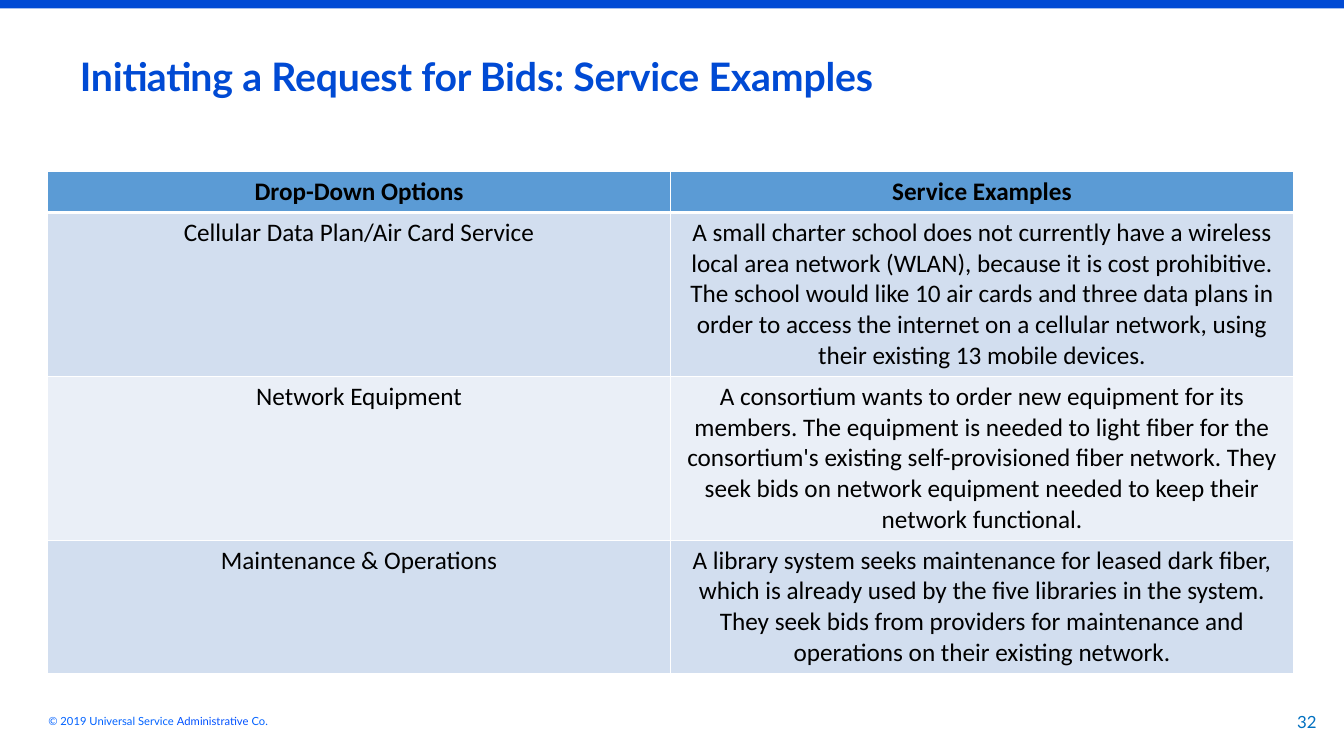
from lxml import etree
from pptx import Presentation
from pptx.dml.color import RGBColor
from pptx.enum import shapes, text
from pptx.oxml import ns
from pptx.util import Pt

BLUE = RGBColor(0x00, 0x4A, 0xD4)
PAGE = RGBColor(0x00, 0x70, 0xC0)
NOTE = RGBColor(0x00, 0x62, 0xFF)
DEEP = RGBColor(0x00, 0x51, 0xFF)
HEAD = RGBColor(0x5B, 0x9B, 0xD5)
BANDS = [RGBColor(0xD2, 0xDE, 0xEF), RGBColor(0xEA, 0xEF, 0xF7)]
BLACK = RGBColor(0, 0, 0)

ROWS = [
    ("Drop-Down Options", "Service Examples"),
    ("Cellular Data Plan/Air Card Service",
     "A small charter school does not currently have a wireless local area "
     "network (WLAN), because it is cost prohibitive. The school would like "
     "10 air cards and three data plans in order to access the internet on a "
     "cellular network, using their existing 13 mobile devices."),
    ("Network Equipment",
     "A consortium wants to order new equipment for its members. The "
     "equipment is needed to light fiber for the consortium's existing "
     "self-provisioned fiber network. They seek bids on network equipment "
     "needed to keep their network functional."),
    ("Maintenance & Operations",
     "A library system seeks maintenance for leased dark fiber, which is "
     "already used by the five libraries in the system. They seek bids from "
     "providers for maintenance and operations on their existing network."),
]
HEIGHTS = [29.2, 115, 115, 93.5]


def write(frame, *runs, size, font="Lato", bold=False, align="LEFT",
          line=None, track=None):
    """Fill the first paragraph with (text, colour) runs."""
    para = frame.paragraphs[0]
    para.alignment = getattr(text.PP_ALIGN, align)
    if line:
        para.line_spacing = line
    for words, color in runs:
        run = para.add_run()
        run.text = words
        run.font.size, run.font.name, run.font.bold = Pt(size), font, bold
        run.font.color.rgb = color
        if track:
            run.font._element.set("spc", str(track))


def frame_up(frame, anchor="TOP", pads=(0, 0, 0, 0)):
    frame.word_wrap = True
    frame.auto_size = text.MSO_AUTO_SIZE.NONE
    frame.vertical_anchor = getattr(text.MSO_ANCHOR, anchor)
    (frame.margin_left, frame.margin_top,
     frame.margin_right, frame.margin_bottom) = map(Pt, pads)
    return frame


def add_box(slide, x, y, w, h, pads):
    box = slide.shapes.add_textbox(Pt(x), Pt(y), Pt(w), Pt(h))
    return frame_up(box.text_frame, "MIDDLE", pads)


def add_bar(slide, width, height):
    bar = slide.shapes.add_shape(shapes.MSO_SHAPE.RECTANGLE, 0, 0,
                                 width, height)
    bar.shadow.inherit = False
    bar.fill.solid()
    bar.fill.fore_color.rgb = BLUE
    bar.line.fill.background()


def add_title(slide, words):
    title = slide.shapes.title
    title.left, title.top = Pt(57), Pt(41.5)
    title.width, title.height = Pt(891), Pt(30.5)
    write(frame_up(title.text_frame), (words, BLUE), size=28, bold=True,
          line=0.9, track=-10)


def edge(cell, **widths):
    """Draw white cell borders, given as side=points."""
    props = cell._tc.get_or_add_tcPr()
    for spot, (side, width) in enumerate(widths.items()):
        line = etree.Element(ns.qn("a:ln" + side), w=str(Pt(width)))
        fill = etree.SubElement(line, ns.qn("a:solidFill"))
        etree.SubElement(fill, ns.qn("a:srgbClr"), val="FFFFFF")
        props.insert(spot, line)


def add_grid(slide):
    grid = slide.shapes.add_table(len(ROWS), 2, Pt(34), Pt(122.5), Pt(890),
                                  Pt(sum(HEIGHTS))).table
    for r, words in enumerate(ROWS):
        grid.rows[r].height = Pt(HEIGHTS[r])
        for c, label in enumerate(words):
            cell = grid.cell(r, c)
            cell.fill.solid()
            cell.fill.fore_color.rgb = BANDS[(r - 1) % 2] if r else HEAD
            edge(cell, L=1, R=1, T=3 if r == 1 else 1, B=1 if r else 3)
            write(cell.text_frame, (label, BLACK), size=18, font="Calibri",
                  bold=r == 0, align="CENTER")


def main():
    deck = Presentation()
    deck.slide_width, deck.slide_height = Pt(960), Pt(540)
    slide = deck.slides.add_slide(deck.slide_layouts[5])

    # Top bar and title
    add_bar(slide, deck.slide_width, Pt(6))
    add_title(slide, "Initiating a Request for Bids: Service Examples")

    # Options table
    add_grid(slide)

    # Footer
    write(add_box(slide, 26.5, 500.5, 615.5, 28.5, (8, 3.6, 7.2, 3.6)),
          ("© 2019 Universal Service ", NOTE), ("Administrative", DEEP),
          (" Co.", NOTE), size=8, line=Pt(9.7))
    write(add_box(slide, 920.5, 506.5, 20, 17.5, (0, 0.6, 0, 0)),
          ("32", PAGE), size=12, align="RIGHT")

    deck.save("out.pptx")


if __name__ == "__main__":
    main()
